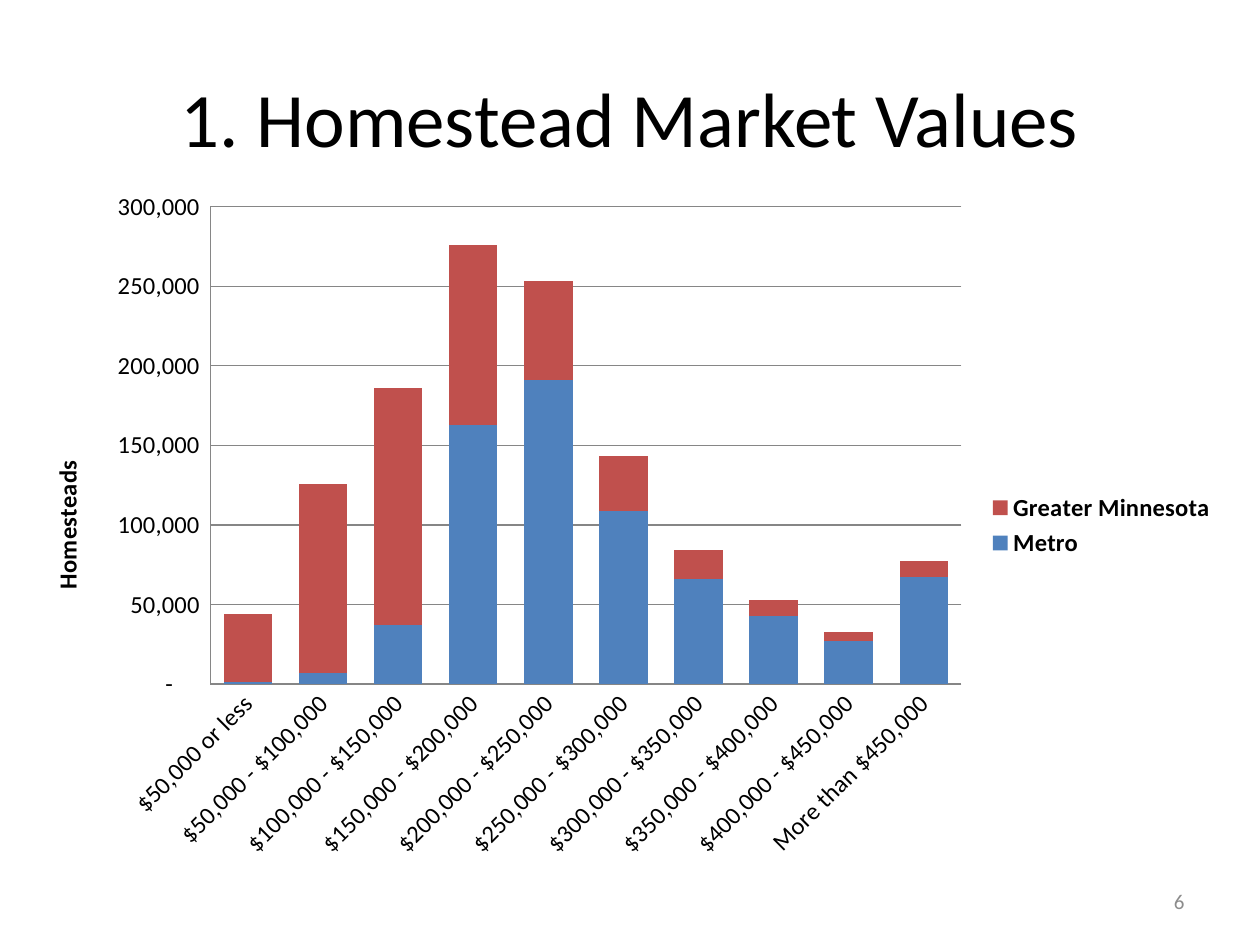
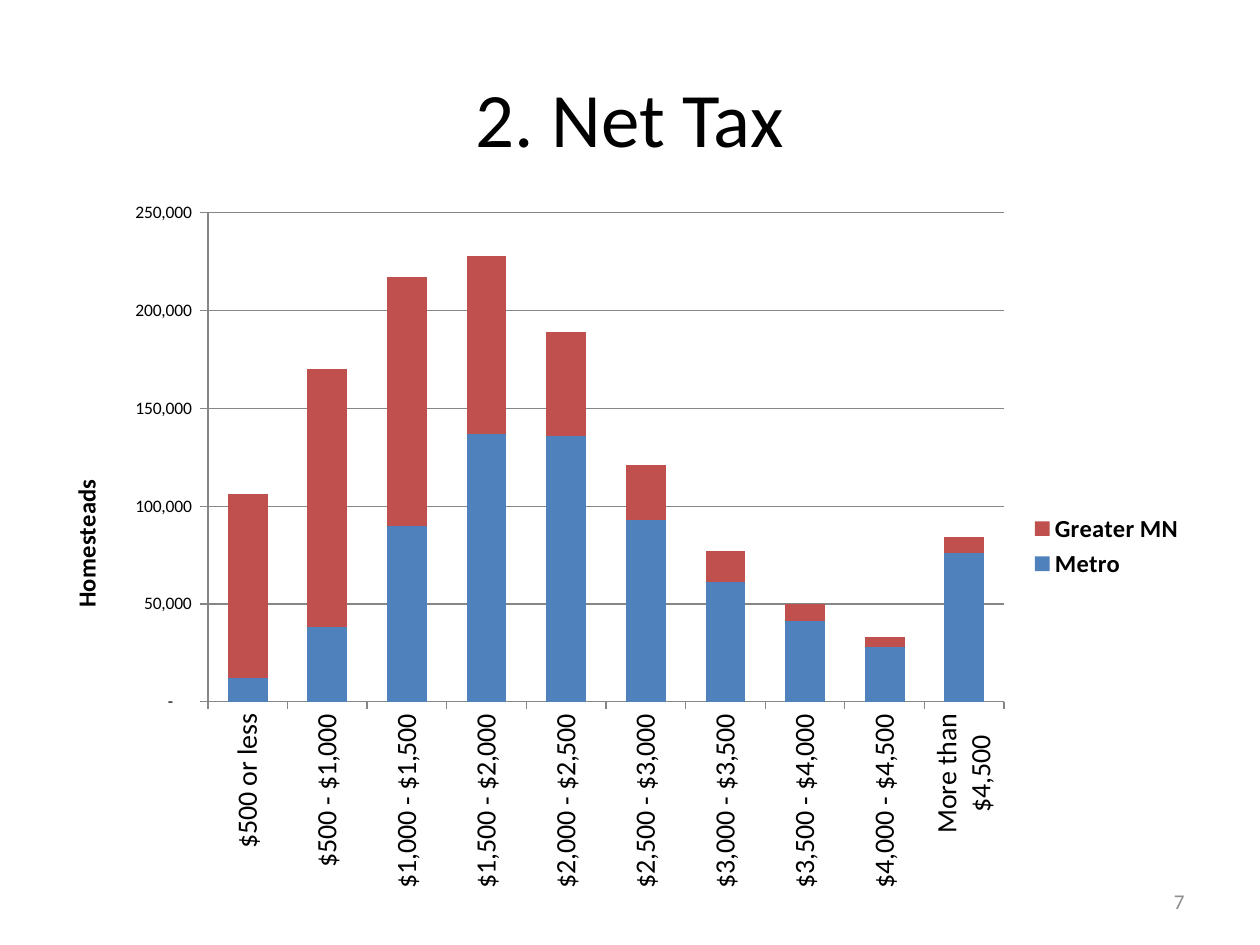
from dataclasses import dataclass

from lxml import etree
from pptx import Presentation
from pptx.chart.data import CategoryChartData
from pptx.dml.color import RGBColor
from pptx.enum.chart import XL_CHART_TYPE, XL_LEGEND_POSITION, XL_TICK_MARK
from pptx.enum.text import MSO_ANCHOR, PP_ALIGN
from pptx.oxml.ns import qn
from pptx.util import Inches, Pt

STACKED = XL_CHART_TYPE.COLUMN_STACKED
LEGEND_RIGHT = XL_LEGEND_POSITION.RIGHT
NO_TICK, OUTER_TICK = XL_TICK_MARK.NONE, XL_TICK_MARK.OUTSIDE
MIDDLE = MSO_ANCHOR.MIDDLE
CENTER, RIGHT = PP_ALIGN.CENTER, PP_ALIGN.RIGHT
BLANK_LAYOUT = 6


@dataclass(frozen=True)
class Theme:
    font: str = "Calibri"
    ink: RGBColor = RGBColor(0x00, 0x00, 0x00)
    muted: RGBColor = RGBColor(0x8C, 0x8C, 0x8C)
    rule: RGBColor = RGBColor(0x86, 0x86, 0x86)
    regions: tuple = (RGBColor(0x4F, 0x81, 0xBD), RGBColor(0xC0, 0x50, 0x4D))
    title_size: int = 44
    page_size: int = 12
    chart_size: int = 10
    label_size: int = 14
    large_label_size: int = 16


THEME = Theme()
COUNT_FORMAT = '_(* #,##0_);_(* \\(#,##0\\);_(* "-"??_);_(@_)'
TITLE_BOX = (0.5, 0.3, 9, 1.25)
PAGE_BOX = (7.17, 6.95, 2.33, 0.4)
AXIS_TITLE_PLACE = {"x": 0.02, "y": 0.4}


def value_ranges(step, count, last_break=" "):
    """Name count brackets of equal width, open at both ends."""
    middle = [f"${step * i:,} - ${step * (i + 1):,}" for i in range(1, count - 1)]
    last = f"More than{last_break}${step * (count - 1):,}"
    return [f"${step:,} or less", *middle, last]


# Series values are in thousands of homesteads; boxes are in inches.
SLIDES = [
    {
        "title": "1. Homestead Market Values", "page": 6,
        "box": (0.17, 1.42, 9.58, 5.5), "plot": (1.67, 1.64, 5.96, 3.79),
        "brackets": value_ranges(50000, 10),
        "homesteads": {
            "Metro": (1, 7, 37, 163, 191, 109, 66, 43, 27, 67),
            "Greater Minnesota": (43, 119, 149, 113, 62, 34, 18, 10, 6, 10),
        },
        "top": 300000, "gap": 55, "tick": NO_TICK, "angle": -45,
        "bracket_size": THEME.label_size, "count_size": THEME.label_size,
    },
    {
        "title": "2. Net Tax", "page": 7,
        "box": (0.33, 1.5, 9.17, 5.67), "plot": (1.65, 1.69, 6.32, 3.88),
        # Upright labels do not wrap by themselves, so the longest is broken
        "brackets": value_ranges(500, 10, last_break="\n"),
        "homesteads": {
            "Metro": (12, 38, 90, 137, 136, 93, 61, 41, 28, 76),
            "Greater MN": (94, 132, 127, 91, 53, 28, 16, 9, 5, 8),
        },
        "top": 250000, "gap": 100, "tick": OUTER_TICK, "angle": -90,
        "bracket_size": THEME.large_label_size, "count_size": THEME.chart_size,
    },
]


def set_attributes(target, values):
    for name, value in values.items():
        setattr(target, name, value)


def style_font(font, size, color=THEME.ink, bold=False):
    set_attributes(font, {"name": THEME.font, "size": Pt(size), "bold": bold})
    font.color.rgb = color


def style_line(line):
    line.color.rgb = THEME.rule
    line.width = Pt(0.75)


def add_text(slide, text, box, size, color, align):
    frame = slide.shapes.add_textbox(*map(Inches, box)).text_frame
    set_attributes(frame, {"word_wrap": True, "vertical_anchor": MIDDLE})
    paragraph = frame.paragraphs[0]
    paragraph.alignment = align
    run = paragraph.add_run()
    run.text = text
    style_font(run.font, size, color)


def rotate_text(element, degrees):
    body = element.find(".//" + qn("a:bodyPr"))
    body.set("rot", str(degrees * 60000))
    body.set("vert", "horz")


def place_part(element, index, settings):
    """Give a chart part a manual layout in fractions of the chart."""
    layout = element.find(qn("c:layout"))
    if layout is None:
        layout = etree.Element(qn("c:layout"))
        element.insert(index, layout)
    manual = etree.SubElement(layout, qn("c:manualLayout"))
    for tag, value in settings.items():
        etree.SubElement(manual, qn(f"c:{tag}")).set("val", str(value))


def place_plot(chart, box, plot):
    left, top, width, height = box
    x, y, w, h = plot
    place_part(chart._chartSpace.chart.plotArea, 0, {
        "layoutTarget": "inner", "xMode": "edge", "yMode": "edge",
        "x": (x - left) / width, "y": (y - top) / height,
        "w": w / width, "h": h / height,
    })


def style_axis(axis, size, tick):
    set_attributes(axis, {"major_tick_mark": tick, "minor_tick_mark": NO_TICK})
    style_font(axis.tick_labels.font, size)
    style_line(axis.format.line)


def style_count_axis(axis, content):
    style_axis(axis, content["count_size"], content["tick"])
    set_attributes(axis, {"minimum_scale": 0, "maximum_scale": content["top"],
                          "major_unit": 50000, "has_major_gridlines": True})
    style_line(axis.major_gridlines.format.line)
    set_attributes(axis.tick_labels, {"number_format": COUNT_FORMAT,
                                      "number_format_is_linked": False})
    # Upright axis title
    heading = axis.axis_title
    run = heading.text_frame.paragraphs[0].add_run()
    run.text = "Homesteads"
    style_font(run.font, THEME.label_size, bold=True)
    rotate_text(heading._element, -90)
    place_part(heading._element, 1,
               {"xMode": "edge", "yMode": "edge", **AXIS_TITLE_PLACE})


def add_homestead_chart(slide, content):
    data = CategoryChartData(number_format=COUNT_FORMAT)
    data.categories = content["brackets"]
    for region, thousands in content["homesteads"].items():
        data.add_series(region, [count * 1000 for count in thousands])
    chart = slide.shapes.add_chart(
        STACKED, *map(Inches, content["box"]), data).chart
    set_attributes(chart, {"has_title": False, "has_legend": True})
    style_font(chart.font, THEME.chart_size)

    # Columns
    columns = chart.plots[0]
    set_attributes(columns, {"gap_width": content["gap"], "overlap": 100,
                             "vary_by_categories": False})
    for series, color in zip(columns.series, THEME.regions):
        series.format.fill.solid()
        series.format.fill.fore_color.rgb = color

    # Axes
    style_axis(chart.category_axis, content["bracket_size"], content["tick"])
    rotate_text(chart.category_axis._element.find(qn("c:txPr")), content["angle"])
    style_count_axis(chart.value_axis, content)

    # Legend and plot area
    set_attributes(chart.legend, {"position": LEGEND_RIGHT,
                                  "include_in_layout": False})
    style_font(chart.legend.font, THEME.label_size, bold=True)
    place_plot(chart, content["box"], content["plot"])


def main():
    deck = Presentation()
    set_attributes(deck, {"slide_width": Inches(10), "slide_height": Inches(7.5)})
    for content in SLIDES:
        slide = deck.slides.add_slide(deck.slide_layouts[BLANK_LAYOUT])
        add_text(slide, content["title"], TITLE_BOX,
                 THEME.title_size, THEME.ink, CENTER)
        add_homestead_chart(slide, content)
        add_text(slide, str(content["page"]), PAGE_BOX,
                 THEME.page_size, THEME.muted, RIGHT)
    deck.save("out.pptx")


if __name__ == "__main__":
    main()
